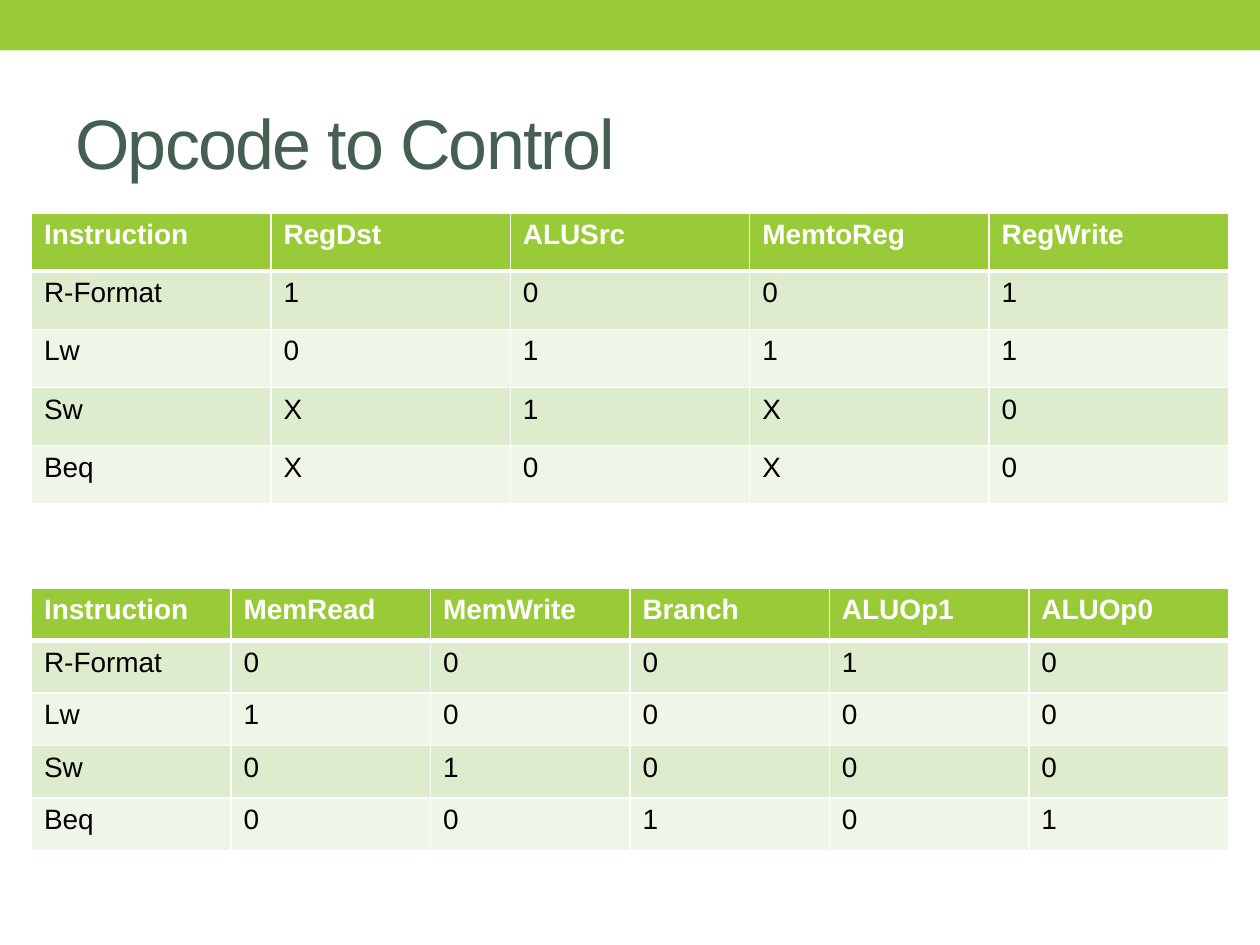
from dataclasses import dataclass

from lxml.etree import SubElement
from pptx import Presentation
from pptx.dml.color import RGBColor
from pptx.enum.shapes import MSO_SHAPE
from pptx.enum.text import MSO_ANCHOR
from pptx.oxml.ns import qn
from pptx.util import Inches, Pt

COLORS = {
    "green": "99CB38",
    "title": "455F51",
    "band_dark": "DEECCE",
    "band_light": "EFF6E8",
    "white": "FFFFFF",
    "black": "000000",
}
FONT = "Arial"
TABLE_LEFT, TABLE_WIDTH = 0.25, 9.5


@dataclass
class ControlTable:
    top: float
    height: float
    signals: list[str]
    values: dict[str, str]  # one character per signal


CONTROL_TABLES = [
    ControlTable(
        1.69, 2.31,
        ["RegDst", "ALUSrc", "MemtoReg", "RegWrite"],
        {"R-Format": "1001", "Lw": "0111", "Sw": "X1X0", "Beq": "X0X0"},
    ),
    ControlTable(
        4.67, 2.08,
        ["MemRead", "MemWrite", "Branch", "ALUOp1", "ALUOp0"],
        {"R-Format": "00010", "Lw": "10000", "Sw": "01000", "Beq": "00101"},
    ),
]


def rgb(name: str) -> RGBColor:
    return RGBColor.from_string(COLORS[name])


def write_text(frame, text: str, *, size: float, color: str,
               bold: bool = False, spacing: float = 0) -> None:
    """Write one span into the frame; spacing is in points between letters."""
    span = frame.paragraphs[0].add_run()
    span.text = text
    span.font.name = FONT
    span.font.size = Pt(size)
    span.font.bold = bold
    span.font.color.rgb = rgb(color)
    if spacing:
        span.font._element.set("spc", str(round(spacing * 100)))


def add_borders(cell, *, top: float = 1, bottom: float = 1) -> None:
    """Give the cell white borders; must run before its fill is set."""
    properties = cell._tc.get_or_add_tcPr()
    for side, width in (("L", 1), ("R", 1), ("T", top), ("B", bottom)):
        line = SubElement(properties, qn(f"a:ln{side}"), w=str(Pt(width)))
        fill = SubElement(line, qn("a:solidFill"))
        SubElement(fill, qn("a:srgbClr"), val=COLORS["white"])


def add_control_table(page, control: ControlTable) -> None:
    rows = [["Instruction", *control.signals]]
    rows += [[name, *bits] for name, bits in control.values.items()]
    columns = len(rows[0])
    table = page.shapes.add_table(
        len(rows), columns, Inches(TABLE_LEFT), Inches(control.top),
        Inches(TABLE_WIDTH), Inches(control.height)).table
    for column in table.columns:
        column.width = Inches(TABLE_WIDTH / columns)
    for row_index, row in enumerate(rows):
        table.rows[row_index].height = Inches(control.height / len(rows))
        header = row_index == 0
        band = "band_dark" if row_index % 2 else "band_light"
        for column_index, text in enumerate(row):
            cell = table.cell(row_index, column_index)
            add_borders(cell, top=3 if row_index == 1 else 1, bottom=3 if header else 1)
            cell.fill.solid()
            cell.fill.fore_color.rgb = rgb("green" if header else band)
            write_text(cell.text_frame, text, size=16, bold=header,
                       color="white" if header else "black")


def add_top_bar(page) -> None:
    bar = page.shapes.add_shape(MSO_SHAPE.RECTANGLE, 0, 0, Inches(10), Inches(0.4))
    bar.shadow.inherit = False
    bar.fill.solid()
    bar.fill.fore_color.rgb = rgb("green")
    bar.line.fill.background()


def add_title(page, text: str) -> None:
    box = page.shapes.add_textbox(Inches(0.5), Inches(0.58), Inches(9), Inches(1.08))
    box.text_frame.word_wrap = True
    box.text_frame.vertical_anchor = MSO_ANCHOR.MIDDLE
    write_text(box.text_frame, text, size=40, color="title", spacing=-1)


def main() -> None:
    deck = Presentation()
    deck.slide_width, deck.slide_height = Inches(10), Inches(7.5)
    page = deck.slides.add_slide(deck.slide_layouts[6])
    add_top_bar(page)
    add_title(page, "Opcode to Control")
    for control in CONTROL_TABLES:
        add_control_table(page, control)
    deck.save("out.pptx")


if __name__ == "__main__":
    main()
